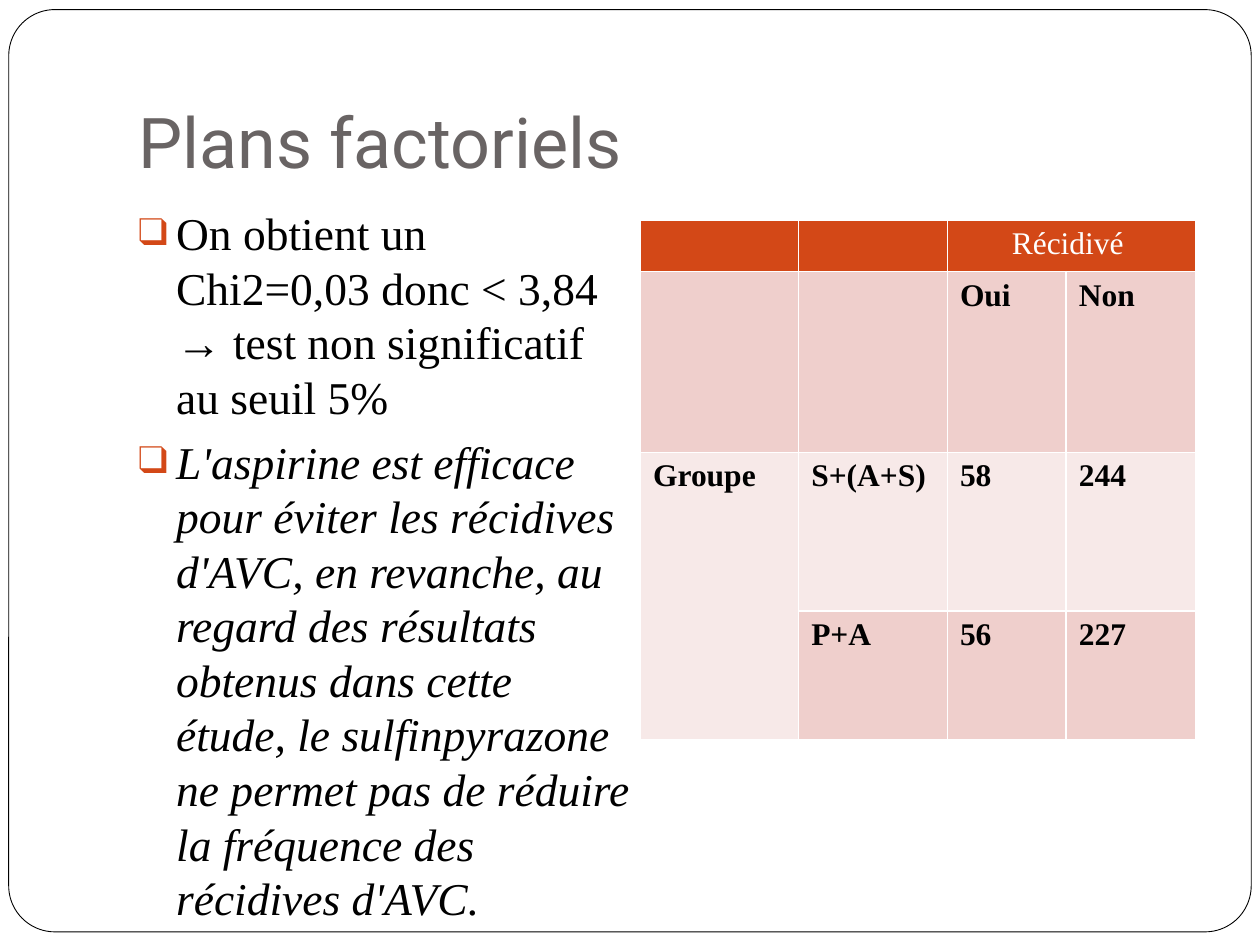
from dataclasses import dataclass

from lxml.etree import SubElement
from pptx import Presentation
from pptx.dml.color import RGBColor
from pptx.enum.shapes import MSO_SHAPE
from pptx.enum.text import MSO_ANCHOR, PP_ALIGN
from pptx.oxml.ns import qn
from pptx.util import Pt

SERIF = "Times New Roman"
RUST, ROSE, PALE = "D34817", "EFCFCC", "F7E9E8"
WHITE, BLACK, GREY = "FFFFFF", "000000", "696464"


@dataclass
class Cell:
    row: int
    col: int
    text: str
    span: tuple[int, int] = (1, 1)


COLS = [90.4, 85, 67.9, 74.2]
ROWS = [29.2, 103.4, 90.7, 73.4]
FILLS = [RUST, ROSE, PALE, ROSE]
CELLS = [
    Cell(0, 2, "Récidivé ", (1, 2)),
    Cell(1, 2, "Oui"), Cell(1, 3, "Non"),
    Cell(2, 0, "Groupe", (2, 1)), Cell(2, 1, "S+(A+S)"),
    Cell(2, 2, "58"), Cell(2, 3, "244"),
    Cell(3, 1, "P+A"), Cell(3, 2, "56"), Cell(3, 3, "227"),
]
POINTS = [
    ("On obtient un Chi2=0,03 donc < 3,84 → test non significatif au seuil 5%",
     False),
    ("L'aspirine est efficace pour éviter les récidives d'AVC, en revanche, "
     "au regard des résultats obtenus dans cette étude, le sulfinpyrazone ne "
     "permet pas de réduire la fréquence des récidives d'AVC.", True),
]


def paint(item, hue: str) -> None:
    """Give a fill or line one solid colour."""
    item.solid()
    item.fore_color.rgb = RGBColor.from_string(hue)


def write(para, text: str, *, size: float, font: str = SERIF,
          hue: str = BLACK, bold: bool = False, slant: bool = False,
          align: PP_ALIGN = PP_ALIGN.LEFT) -> None:
    para.alignment = align
    run = para.add_run()
    run.text = text
    run.font.name, run.font.size = font, Pt(size)
    run.font.bold, run.font.italic = bold, slant
    paint(run.font.fill, hue)


def add_box(slide, left: float, top: float, width: float, height: float):
    frame = slide.shapes.add_textbox(
        Pt(left), Pt(top), Pt(width), Pt(height)).text_frame
    frame.word_wrap = True
    return frame


def add_mark(para, indent: float) -> None:
    """Put a coloured square bullet before a paragraph."""
    props = para._p.get_or_add_pPr()
    props.set("marL", str(Pt(indent)))
    props.set("indent", str(-Pt(indent)))
    SubElement(SubElement(props, qn("a:buClr")), qn("a:srgbClr"), val=RUST)
    SubElement(props, qn("a:buSzPct"), val="85000")
    SubElement(props, qn("a:buFont"), typeface=SERIF)
    SubElement(props, qn("a:buChar"), char="❑")


def add_edge(cell, side: str) -> None:
    line = SubElement(cell._tc.get_or_add_tcPr(), qn(f"a:ln{side}"),
                      w=str(Pt(1)))
    SubElement(SubElement(line, qn("a:solidFill")), qn("a:srgbClr"), val=WHITE)


def add_grid(slide, left: float, top: float) -> None:
    table = slide.shapes.add_table(
        len(ROWS), len(COLS), Pt(left), Pt(top),
        Pt(sum(COLS)), Pt(sum(ROWS))).table
    for col, width in zip(table.columns, COLS):
        col.width = Pt(width)
    for row, height in zip(table.rows, ROWS):
        row.height = Pt(height)

    # Borders and fills
    for r, fill in enumerate(FILLS):
        for c in range(len(COLS)):
            cell = table.cell(r, c)
            for side in "LRTB":
                add_edge(cell, side)
            paint(cell.fill, fill)

    # Wording and merged cells
    for item in CELLS:
        cell = table.cell(item.row, item.col)
        down, across = item.span
        if item.span != (1, 1):
            cell.merge(table.cell(item.row + down - 1, item.col + across - 1))
        head = item.row == 0
        write(cell.text_frame.paragraphs[0], item.text, size=18,
              hue=WHITE if head else BLACK, bold=not head,
              align=PP_ALIGN.CENTER if head else PP_ALIGN.LEFT)


def main() -> None:
    deck = Presentation()
    deck.slide_width, deck.slide_height = Pt(720), Pt(540)
    slide = deck.slides.add_slide(deck.slide_layouts[6])

    # Rounded frame
    frame = slide.shapes.add_shape(MSO_SHAPE.ROUNDED_RECTANGLE,
                                   Pt(5), Pt(5.5), Pt(710), Pt(527))
    frame.adjustments[0] = 0.05
    frame.shadow.inherit = False
    paint(frame.fill, WHITE)
    paint(frame.line.fill, BLACK)
    frame.line.width = Pt(0.5)

    # Title
    title = add_box(slide, 72, 21.6, 612, 90)
    title.vertical_anchor = MSO_ANCHOR.BOTTOM
    title.margin_bottom = Pt(7.2)
    write(title.paragraphs[0], "Plans factoriels", size=40, font="Roboto",
          hue=GREY)

    # Findings
    body = add_box(slide, 72, 113.76, 295.2, 360)
    for num, (text, slant) in enumerate(POINTS):
        para = body.add_paragraph() if num else body.paragraphs[0]
        para.space_before = Pt(5.8)
        add_mark(para, 21.6)
        write(para, text, size=26, slant=slant)

    # Counts by group
    add_grid(slide, 366, 126)
    deck.save("out.pptx")


if __name__ == "__main__":
    main()
